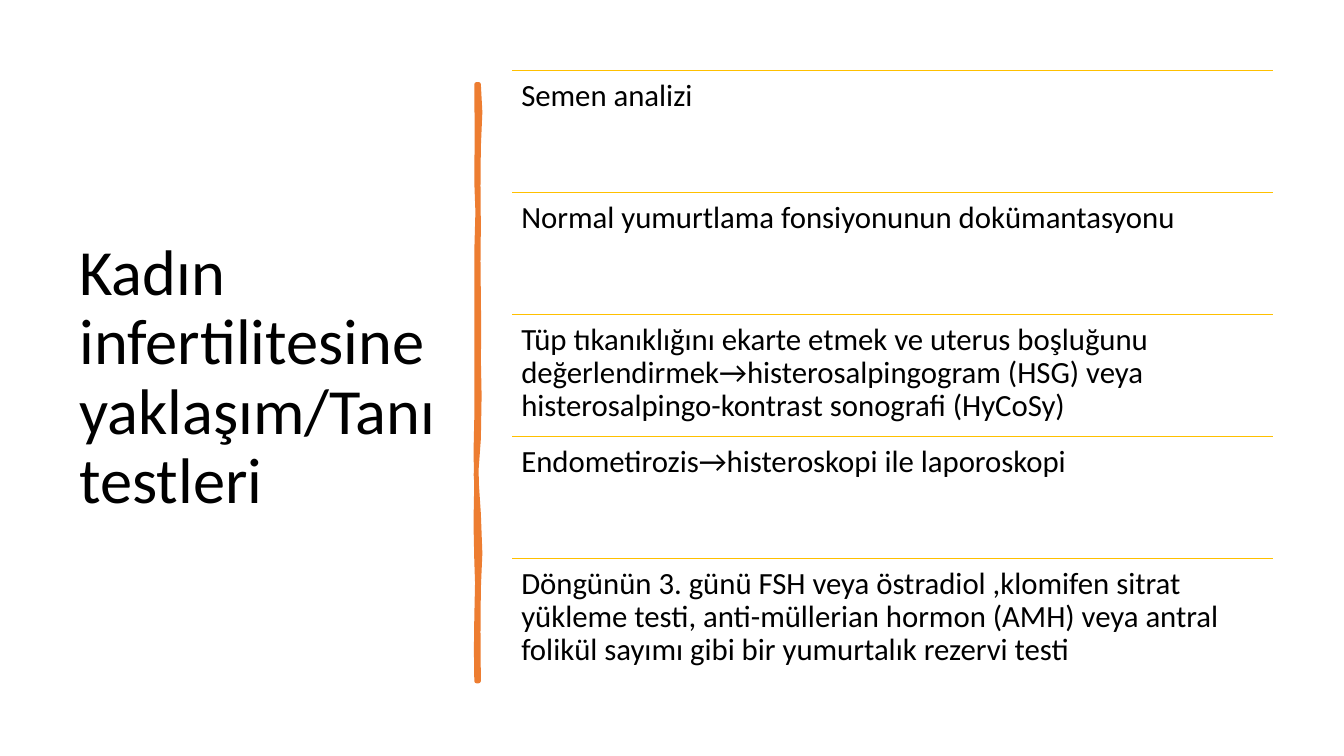
from dataclasses import dataclass

from lxml.etree import SubElement
from pptx import Presentation
from pptx.dml.color import RGBColor
from pptx.enum.shapes import MSO_CONNECTOR
from pptx.enum.text import MSO_ANCHOR, PP_ALIGN
from pptx.oxml.ns import qn
from pptx.slide import Slide
from pptx.util import Inches, Pt


@dataclass(frozen=True)
class Theme:
    font: str = "Calibri"
    text: RGBColor = RGBColor(0x00, 0x00, 0x00)
    accent: RGBColor = RGBColor(0xED, 0x7D, 0x31)
    rule: RGBColor = RGBColor(0xFF, 0xC0, 0x00)
    title_size: float = 46
    item_size: float = 22
    accent_width: float = 3.25
    rule_width: float = 1
    line_spacing: float = 0.9


@dataclass(frozen=True)
class Grid:
    """Two columns over equal rows, in inches."""
    title_left: float = 0.69
    title_width: float = 4.01
    list_left: float = 5.08
    list_width: float = 7.55
    top: float = 0.7
    row_height: float = 1.21

    def row_top(self, row: int) -> float:
        return self.top + row * self.row_height


@dataclass(frozen=True)
class TextBlock:
    text: str
    left: float
    top: float
    width: float
    height: float
    size: float
    inset: float
    anchor: MSO_ANCHOR


@dataclass(frozen=True)
class Curve:
    """A cubic curve: two control points and an end point."""
    x1: float
    y1: float
    x2: float
    y2: float
    x: float
    y: float

    def points(self, x0: float, y0: float) -> list[tuple[float, float]]:
        """Midpoint and end of the curve that starts at (x0, y0)."""
        middle = ((x0 + 3 * self.x1 + 3 * self.x2 + self.x) / 8,
                  (y0 + 3 * self.y1 + 3 * self.y2 + self.y) / 8)
        return [middle, (self.x, self.y)]


THEME = Theme()
GRID = Grid()
TITLE = "Kadın infertilitesine yaklaşım/Tanı testleri"
TESTS = (
    "Semen analizi",
    "Normal yumurtlama fonsiyonunun dokümantasyonu",
    "Tüp tıkanıklığını ekarte etmek ve uterus boşluğunu "
    "değerlendirmek→histerosalpingogram (HSG) veya "
    "histerosalpingo-kontrast sonografi (HyCoSy)",
    "Endometirozis→histeroskopi ile laporoskopi",
    "Döngünün 3. günü FSH veya östradiol ,klomifen sitrat yükleme testi, "
    "anti-müllerian hormon (AMH) veya antral folikül sayımı gibi bir "
    "yumurtalık rezervi testi",
)

# Hand-drawn divider: down the right edge, back up the left edge
DIVIDER_CENTER = (4.74, 3.8)
DIVIDER_START = (4.75, 0.84)
DIVIDER_CURVES = (
    Curve(4.77, 1.02, 4.77, 1.19, 4.75, 1.46),
    Curve(4.73, 1.73, 4.76, 1.95, 4.75, 2.26),
    Curve(4.74, 2.57, 4.75, 2.62, 4.75, 2.94),
    Curve(4.74, 3.25, 4.77, 3.42, 4.75, 3.56),
    Curve(4.73, 3.7, 4.79, 4.14, 4.75, 4.36),
    Curve(4.71, 4.57, 4.72, 4.84, 4.75, 5.1),
    Curve(4.77, 5.36, 4.77, 5.64, 4.75, 5.84),
    Curve(4.73, 6.03, 4.76, 6.5, 4.75, 6.76),
    Curve(4.74, 6.76, 4.73, 6.76, 4.73, 6.76),
    Curve(4.74, 6.46, 4.71, 6.44, 4.73, 6.13),
    Curve(4.74, 5.83, 4.74, 5.7, 4.73, 5.57),
    Curve(4.72, 5.44, 4.72, 4.95, 4.73, 4.77),
    Curve(4.73, 4.59, 4.71, 4.45, 4.73, 4.15),
    Curve(4.74, 3.86, 4.72, 3.73, 4.73, 3.35),
    Curve(4.74, 2.98, 4.72, 2.81, 4.73, 2.5),
    Curve(4.74, 2.18, 4.75, 2, 4.73, 1.81),
    Curve(4.7, 1.63, 4.77, 1.04, 4.73, 0.84),
)


def add_text(slide: Slide, block: TextBlock) -> None:
    shape = slide.shapes.add_textbox(Inches(block.left), Inches(block.top),
                                     Inches(block.width), Inches(block.height))
    frame = shape.text_frame
    frame.word_wrap = True
    frame.vertical_anchor = block.anchor
    frame.margin_left = frame.margin_right = Inches(block.inset)
    frame.margin_top = frame.margin_bottom = Inches(block.inset)
    paragraph = frame.paragraphs[0]
    paragraph.text = block.text
    paragraph.alignment = PP_ALIGN.LEFT
    paragraph.line_spacing = THEME.line_spacing
    paragraph.font.name = THEME.font
    paragraph.font.size = Pt(block.size)
    paragraph.font.color.rgb = THEME.text


def add_rule(slide: Slide, top: float) -> None:
    right = GRID.list_left + GRID.list_width
    rule = slide.shapes.add_connector(MSO_CONNECTOR.STRAIGHT, Inches(GRID.list_left),
                                      Inches(top), Inches(right), Inches(top))
    rule.line.color.rgb = THEME.rule
    rule.line.width = Pt(THEME.rule_width)
    SubElement(rule._element.spPr, qn("a:effectLst"))


def add_divider(slide: Slide) -> None:
    """Draw the outline lying down, then turn it upright about its center."""
    outline = [DIVIDER_START]
    for curve in DIVIDER_CURVES:
        outline += curve.points(*outline[-1])
    center_x, center_y = DIVIDER_CENTER
    lying = [(Inches(center_x + y - center_y), Inches(center_y + center_x - x))
             for x, y in outline]
    builder = slide.shapes.build_freeform(*lying[0])
    builder.add_line_segments(lying[1:], close=True)
    divider = builder.convert_to_shape()
    divider.rotation = 90
    divider.shadow.inherit = False
    divider.fill.solid()
    divider.fill.fore_color.rgb = THEME.accent
    divider.line.color.rgb = THEME.accent
    divider.line.width = Pt(THEME.accent_width)
    SubElement(divider.line._get_or_add_ln(), qn("a:round"))


def main() -> None:
    presentation = Presentation()
    presentation.slide_width = Inches(13.33)
    presentation.slide_height = Inches(7.5)
    slide = presentation.slides.add_slide(presentation.slide_layouts[6])

    # Title column
    add_text(slide, TextBlock(TITLE, GRID.title_left, GRID.top, GRID.title_width, 6.11,
                              THEME.title_size, 0.1, MSO_ANCHOR.MIDDLE))
    add_divider(slide)

    # Ruled list of tests
    for row, test in enumerate(TESTS):
        top = GRID.row_top(row)
        add_rule(slide, top)
        add_text(slide, TextBlock(test, GRID.list_left, top, GRID.list_width,
                                  GRID.row_height, THEME.item_size, 0.09, MSO_ANCHOR.TOP))

    presentation.save("out.pptx")


if __name__ == "__main__":
    main()
